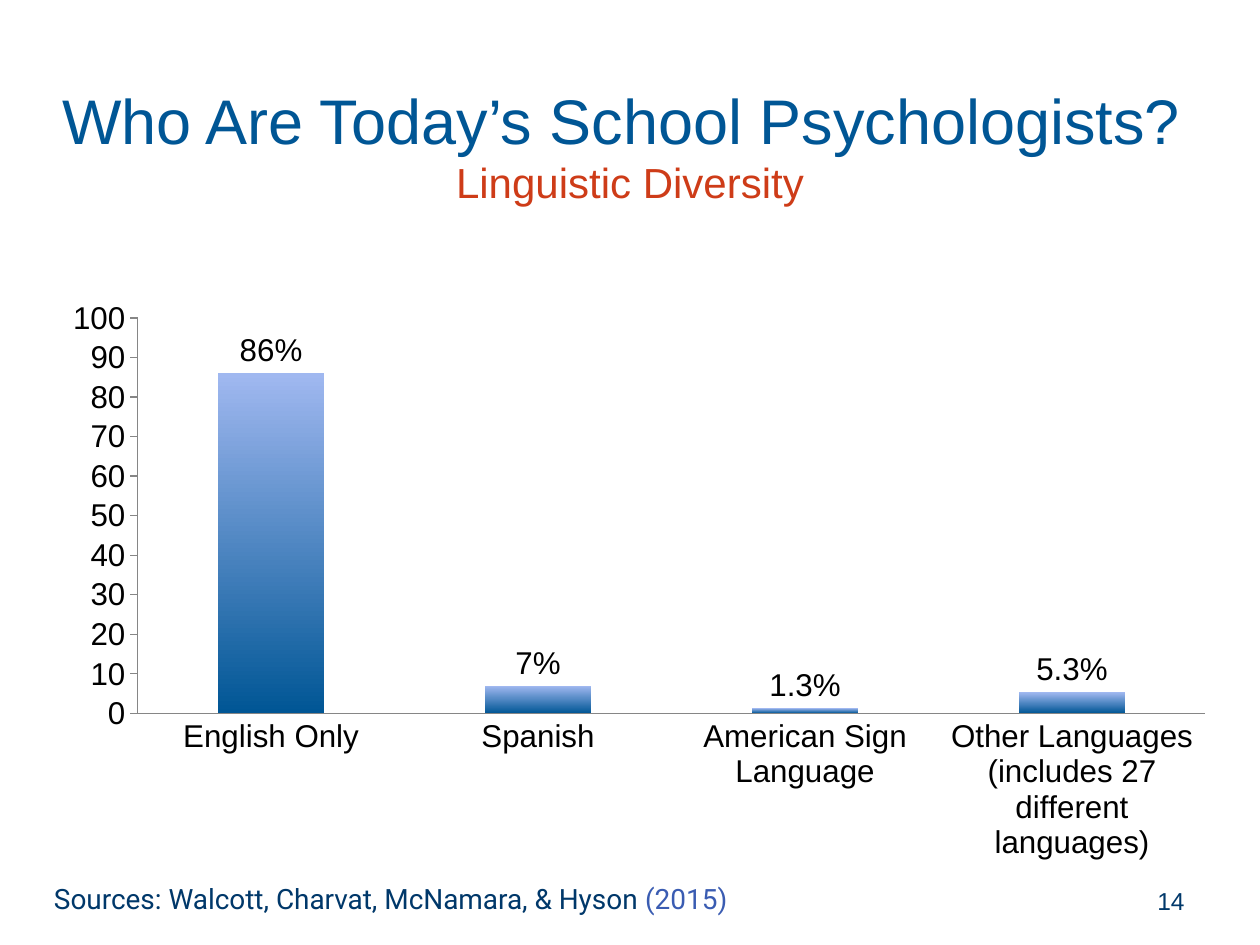
import pptx
import pptx.chart.data
import pptx.dml.color
import pptx.enum.chart
import pptx.enum.text
import pptx.util
from lxml import etree
from pptx.util import Inches

NAVY, BLUE, LIGHT_BLUE = "00386A", "005695", "A0B8F0"
RED, LINK_BLUE, GRAY, BLACK = "CE3C18", "3A5CB2", "868686", "000000"
ALIGN = pptx.enum.text.PP_ALIGN
ANCHOR = pptx.enum.text.MSO_ANCHOR


def color(value):
    return pptx.dml.color.RGBColor.from_string(value)


class SlideBuilder:
    def __init__(self, presentation):
        self.slide = presentation.slides.add_slide(presentation.slide_layouts[5])

    def style_font(self, font, size, value, name="Arial"):
        font.name = name
        font.size = pptx.util.Pt(size)
        font.color.rgb = color(value)

    def title(self, heading, subtitle, box):
        shape = self.slide.shapes.title
        shape.left, shape.top, shape.width, shape.height = map(Inches, box)
        frame = shape.text_frame
        frame.text = f"{heading}\v{subtitle}"
        frame.vertical_anchor = ANCHOR.MIDDLE
        paragraph = frame.paragraphs[0]
        paragraph.alignment = ALIGN.CENTER
        for run, size, value in zip(paragraph.runs, (36, 24), (BLUE, RED)):
            self.style_font(run.font, size, value)

    def text(self, parts, box, size, name, align, anchor):
        frame = self.slide.shapes.add_textbox(*map(Inches, box)).text_frame
        frame.word_wrap = True
        frame.vertical_anchor = anchor
        paragraph = frame.paragraphs[0]
        paragraph.alignment = align
        for words, value in parts:
            run = paragraph.add_run()
            run.text = words
            self.style_font(run.font, size, value, name)

    def column_chart(self, values, box, plot_area):
        data = pptx.chart.data.CategoryChartData()
        data.categories = list(values)
        data.add_series("Series 1", list(values.values()))
        chart = self.slide.shapes.add_chart(
            pptx.enum.chart.XL_CHART_TYPE.COLUMN_CLUSTERED, *map(Inches, box), data
        ).chart
        chart.has_legend = False
        chart.has_title = False
        self.style_font(chart.font, 18, BLACK)
        self.axes(chart)
        self.columns(chart.plots[0])
        self.place_plot(chart, plot_area)

    def axes(self, chart):
        marks = pptx.enum.chart.XL_TICK_MARK
        for axis, mark in ((chart.category_axis, marks.NONE), (chart.value_axis, marks.OUTSIDE)):
            axis.has_major_gridlines = False
            axis.major_tick_mark = mark
            axis.minor_tick_mark = marks.NONE
            axis.format.line.color.rgb = color(GRAY)
            axis.format.line.width = pptx.util.Pt(0.75)
        chart.value_axis.minimum_scale = 0
        chart.value_axis.maximum_scale = 100
        chart.value_axis.major_unit = 10

    def columns(self, plot):
        plot.gap_width = 150
        plot.overlap = -25
        plot.vary_by_categories = False
        fill = plot.series[0].format.fill
        fill.gradient()
        fill.gradient_angle = 90
        for stop, value in zip(fill.gradient_stops, (BLUE, LIGHT_BLUE)):
            stop.color.rgb = color(value)
        plot.has_data_labels = True
        labels = plot.data_labels
        labels.show_value = True
        labels.number_format = 'General"%"'
        labels.number_format_is_linked = False
        labels.position = pptx.enum.chart.XL_LABEL_POSITION.OUTSIDE_END
        self.style_font(labels.font, 18, BLACK)

    def place_plot(self, chart, plot_area):
        namespace = "{http://schemas.openxmlformats.org/drawingml/2006/chart}"
        area = chart.element.find(f".//{namespace}plotArea")
        for old in area.findall(f"{namespace}layout"):
            area.remove(old)
        layout = etree.Element(f"{namespace}layout")
        manual = etree.SubElement(layout, f"{namespace}manualLayout")
        settings = [("layoutTarget", "inner"), ("xMode", "edge"), ("yMode", "edge")]
        for tag, value in settings + list(zip("xywh", plot_area)):
            etree.SubElement(manual, namespace + tag).set("val", str(value))
        area.insert(0, layout)


def main():
    presentation = pptx.Presentation()
    presentation.slide_width = Inches(10)
    presentation.slide_height = Inches(7.5)
    builder = SlideBuilder(presentation)
    builder.title("Who Are Today’s School Psychologists? ", "Linguistic Diversity", (0, 0.52, 10, 1.25))
    languages = {
        "English Only": 86,
        "Spanish": 7,
        "American Sign Language": 1.3,
        "Other Languages (includes 27 different languages)": 5.3,
    }
    builder.column_chart(languages, (0.58, 2.33, 9.17, 4.83), (0.05, 0.04, 0.93, 0.65))
    builder.text([("14", NAVY)], (7.17, 6.95, 2.33, 0.4), 14, "Arial", ALIGN.RIGHT, ANCHOR.MIDDLE)
    sources = [("Sources: Walcott, Charvat, McNamara, & Hyson", NAVY), (" (2015)", LINK_BLUE)]
    builder.text(sources, (0.33, 6.67, 7.08, 0.64), 16, "Roboto", ALIGN.LEFT, ANCHOR.BOTTOM)
    presentation.save("out.pptx")


if __name__ == "__main__":
    main()
